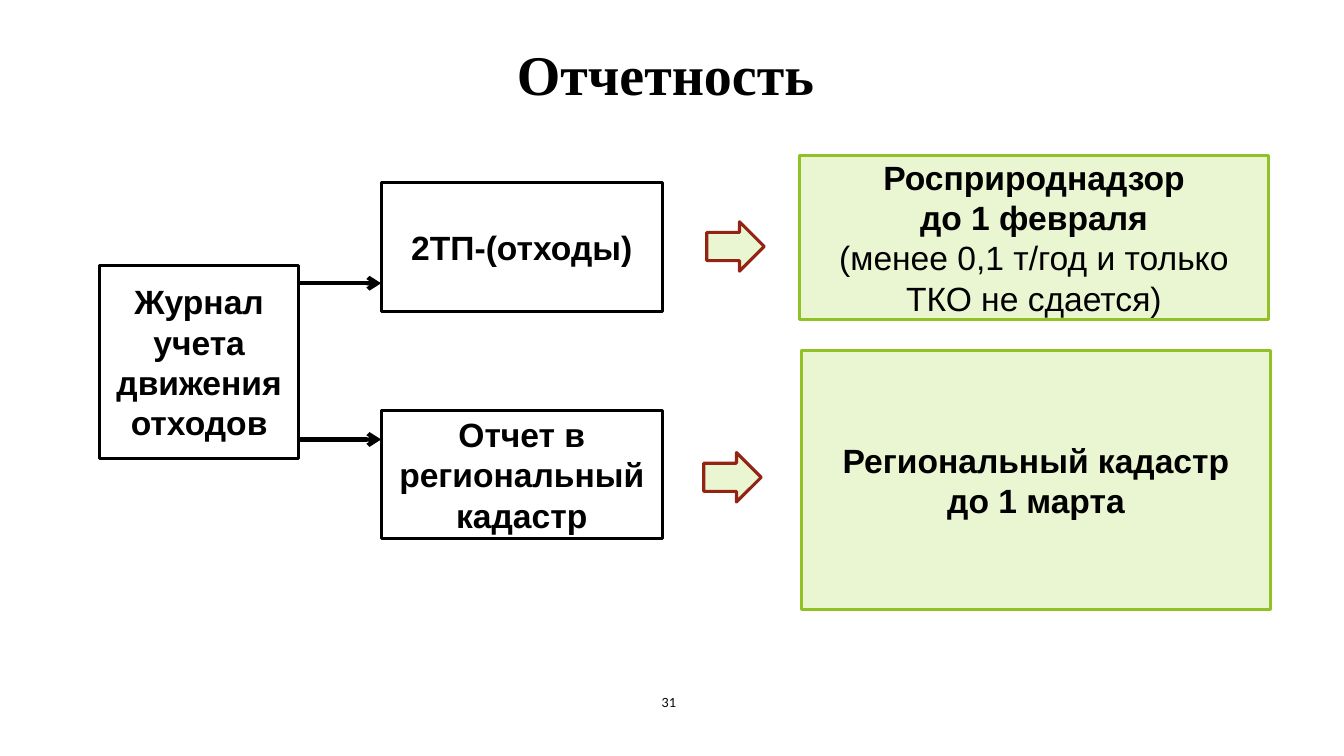
from lxml import etree
from pptx import Presentation
from pptx.dml.color import RGBColor
from pptx.enum.shapes import MSO_CONNECTOR as Connector, MSO_SHAPE as Shape
from pptx.enum.text import MSO_ANCHOR as Anchor, PP_ALIGN as Align
from pptx.oxml.ns import qn
from pptx.util import Inches, Pt

BLACK, WHITE = "000000", "FFFFFF"
PALE_GREEN, GREEN, RED = "EAF6D1", "90C226", "932313"


def color(hex_code):
    return RGBColor.from_string(hex_code)


def write(frame, *lines, font="Arial", size=24, bold=True, light=()):
    """Write centred paragraphs; those whose index is in light are not bold."""
    frame.word_wrap = True
    frame.vertical_anchor = Anchor.MIDDLE
    for index, line in enumerate(lines):
        paragraph = frame.paragraphs[0] if index == 0 else frame.add_paragraph()
        paragraph.alignment = Align.CENTER
        run = paragraph.add_run()
        run.text = line
        run.font.name = font
        run.font.size = Pt(size)
        run.font.bold = bold and index not in light
        run.font.color.rgb = color(BLACK)


class ReportSlide:
    line_width = Pt(2.25)
    flow_width = Pt(3)

    def __init__(self, deck):
        self.slide = deck.slides.add_slide(deck.slide_layouts[5])
        self.shapes = self.slide.shapes

    def paint(self, shape, fill, line):
        if fill:
            shape.fill.solid()
            shape.fill.fore_color.rgb = color(fill)
        else:
            shape.fill.background()
        shape.line.color.rgb = color(line)
        shape.line.width = self.line_width

    def title(self, text, left, top, width, height):
        heading = self.shapes.title
        heading.left, heading.top = Inches(left), Inches(top)
        heading.width, heading.height = Inches(width), Inches(height)
        self.paint(heading, WHITE, WHITE)
        write(heading.text_frame, text, font="Times New Roman", size=40)

    def preset(self, kind, left, top, width, height, fill, line):
        shape = self.shapes.add_shape(
            kind, Inches(left), Inches(top), Inches(width), Inches(height))
        shape.shadow.inherit = False
        self.paint(shape, fill, line)
        return shape

    def box(self, left, top, width, height, *lines,
            fill=None, line=BLACK, light=()):
        shape = self.preset(Shape.RECTANGLE, left, top, width, height, fill, line)
        write(shape.text_frame, *lines, light=light)

    def block_arrow(self, left, top):
        arrow = self.preset(Shape.DOWN_ARROW, left, top, 0.49, 0.57,
                            PALE_GREEN, RED)
        arrow.adjustments[0], arrow.adjustments[1] = 0.57, 0.5
        arrow.rotation = 270

    def flow(self, start, end, y):
        link = self.shapes.add_connector(
            Connector.STRAIGHT, Inches(start), Inches(y), Inches(end), Inches(y))
        link.line.color.rgb = color(BLACK)
        link.line.width = self.flow_width
        etree.SubElement(link.line._get_or_add_ln(), qn("a:tailEnd"), type="arrow")
        etree.SubElement(link._element.spPr, qn("a:effectLst"))

    def page_number(self, number, left, top, width, height):
        label = self.shapes.add_textbox(
            Inches(left), Inches(top), Inches(width), Inches(height))
        write(label.text_frame, number, font="Lato", size=9, bold=False)


def main():
    deck = Presentation()
    deck.slide_width, deck.slide_height = Inches(13.33), Inches(7.5)
    page = ReportSlide(deck)
    page.title("Отчетность", 3.44, 0.27, 6.32, 0.92)

    # Reports and the journal they are drawn from
    page.box(3.78, 1.81, 2.79, 1.28, "2ТП-(отходы)")
    page.box(3.78, 4.07, 2.79, 1.27, "Отчет в региональный кадастр")
    page.box(0.99, 2.63, 1.97, 1.92, "Журнал учета движения отходов")
    for flow_y in (2.81, 4.36):
        page.flow(2.97, 3.78, flow_y)

    # Recipients and deadlines
    page.box(7.93, 1.54, 4.65, 1.63, "Росприроднадзор", "до 1 февраля",
             "(менее 0,1 т/год и только ТКО не сдается)",
             fill=PALE_GREEN, line=GREEN, light=(2,))
    page.box(7.95, 3.48, 4.65, 2.57, "Региональный кадастр", "до 1 марта",
             fill=PALE_GREEN, line=GREEN)
    for arrow_left, arrow_top in ((7.05, 2.16), (7.02, 4.45)):
        page.block_arrow(arrow_left, arrow_top)

    page.page_number("31", 6.26, 6.77, 0.75, 0.4)
    deck.save("out.pptx")


if __name__ == "__main__":
    main()
